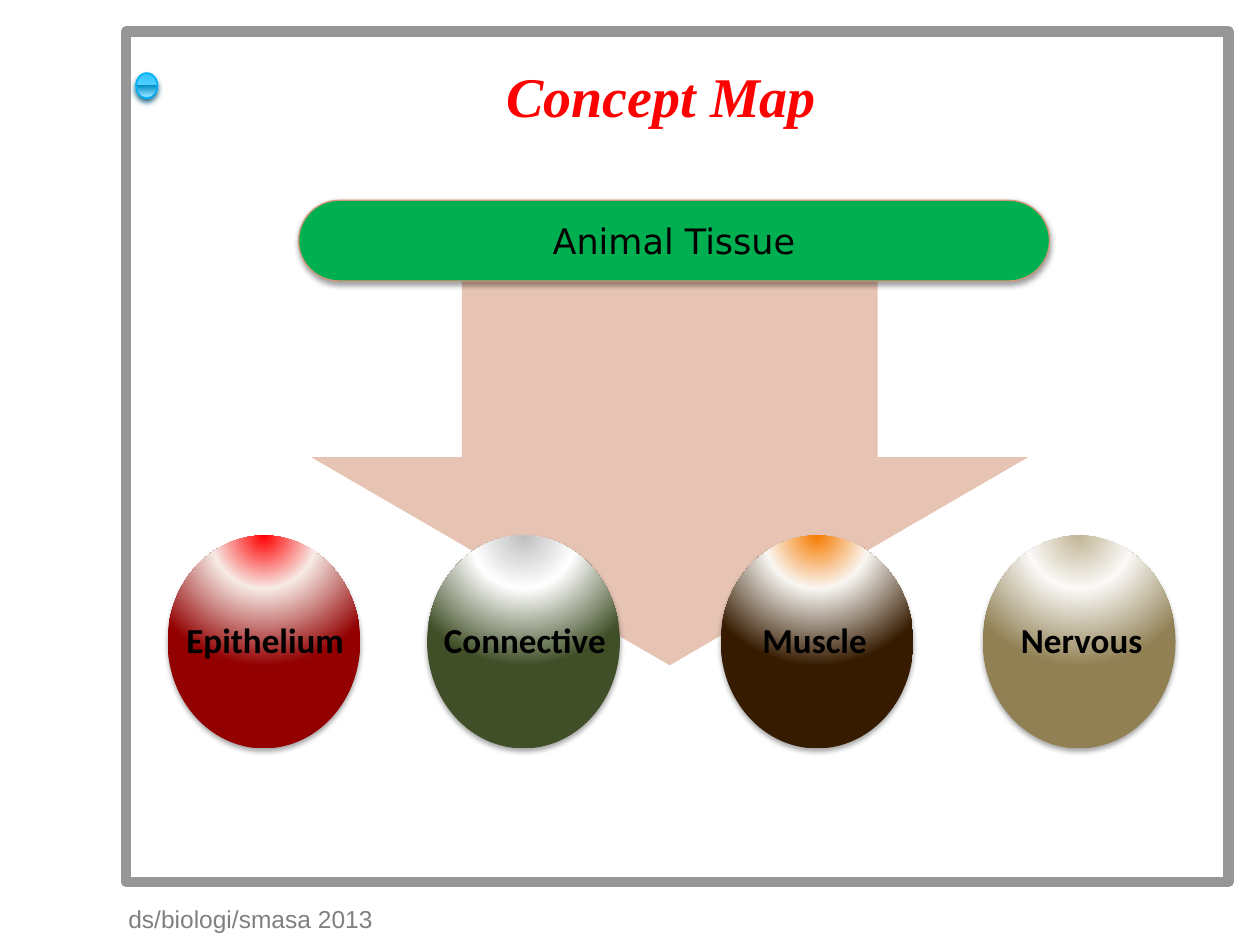
from dataclasses import dataclass
from typing import NamedTuple

from pptx import Presentation
from pptx.dml.color import RGBColor
from pptx.enum.shapes import MSO_SHAPE
from pptx.enum.text import MSO_ANCHOR, PP_ALIGN
from pptx.oxml import parse_xml
from pptx.oxml.ns import nsdecls
from pptx.util import Inches, Pt

RECTANGLE, ELLIPSE = MSO_SHAPE.RECTANGLE, MSO_SHAPE.OVAL
UP_ARROW, ROUNDED = MSO_SHAPE.UP_ARROW, MSO_SHAPE.ROUNDED_RECTANGLE
MIDDLE, TOP = MSO_ANCHOR.MIDDLE, MSO_ANCHOR.TOP
LEFT, CENTER = PP_ALIGN.LEFT, PP_ALIGN.CENTER
RADIAL = '<a:path path="circle"><a:fillToRect l="50000" r="50000" b="100000"/></a:path>'
VERTICAL = '<a:lin ang="5400000" scaled="0"/>'


class Area(NamedTuple):
    left: float
    top: float
    width: float
    height: float


class TextStyle(NamedTuple):
    font: str
    size: int
    color: str
    bold: bool = False
    italic: bool = False


class Shadow(NamedTuple):
    color: str
    opacity: int
    distance: float


class Tissue(NamedTuple):
    name: str
    left: float
    label_left: float
    label_width: float
    colors: tuple[str, str, str]


@dataclass(frozen=True)
class Theme:
    white: str = "FFFFFF"
    frame: str = "969696"
    arrow: str = "E6C3B3"
    banner: str = "00B050"
    banner_line: str = "D3977B"
    dot_line: str = "00B0F6"
    title: TextStyle = TextStyle("Times New Roman", 32, "FF0000", True, True)
    heading: TextStyle = TextStyle("DejaVu Sans", 20, "000000")
    label: TextStyle = TextStyle("Calibri", 20, "000000", True)
    footer: TextStyle = TextStyle("Arial", 14, "808080")
    ball_shadow: Shadow = Shadow("000000", 35, 1.8)
    banner_shadow: Shadow = Shadow("000000", 38, 1.6)
    dot_shadow: Shadow = Shadow("005A7E", 83, 2)
    dot_stops: tuple = ((0, "2FC4FF"), (49, "53CEFF"), (49, "0090C7"), (92, "8FDFFF"), (100, "00B0F6"))
    ball_positions: tuple = (0, 37, 91)


THEME = Theme()
TISSUES = (
    Tissue("Epithelium", 1.33, 1.38, 1.45, ("FF0000", "F7EBE6", "920000")),
    Tissue("Connective", 3.39, 3.42, 1.49, ("BFBFBF", "FFFFFF", "404F27")),
    Tissue("Muscle", 5.72, 5.76, 1.41, ("F77C00", "F9F7F3", "361B00")),
    Tissue("Nervous", 7.8, 7.92, 1.33, ("C2B595", "FBFAF8", "918054")),
)


def add_shape(page, kind, area: Area, fill: str = "", line: str = "", weight: float = 0):
    """Add a preset shape without its default shadow."""
    shape = page.shapes.add_shape(kind, *map(Inches, area))
    shape.shadow.inherit = False
    if fill:
        shape.fill.solid()
        shape.fill.fore_color.rgb = RGBColor.from_string(fill)
    if line:
        shape.line.color.rgb = RGBColor.from_string(line)
        shape.line.width = Pt(weight)
    else:
        shape.line.fill.background()
    return shape


def set_gradient(shape, stops, direction: str) -> None:
    """Fill a shape with gradient stops given as percent and colour."""
    marks = "".join(
        f'<a:gs pos="{position * 1000}"><a:srgbClr val="{color}"/></a:gs>' for position, color in stops
    )
    gradient = parse_xml(
        f'<a:gradFill {nsdecls("a")} rotWithShape="1"><a:gsLst>{marks}</a:gsLst>{direction}</a:gradFill>'
    )
    shape.element.spPr.prstGeom.addnext(gradient)


def set_shadow(shape, shadow: Shadow) -> None:
    """Give a shape a soft shadow that falls downwards."""
    effects = shape.element.spPr.find("{*}effectLst")
    effects.append(parse_xml(
        f'<a:outerShdw {nsdecls("a")} blurRad="{Pt(3.1)}" dist="{Pt(shadow.distance)}" dir="5400000" '
        f'rotWithShape="0"><a:srgbClr val="{shadow.color}"><a:alpha val="{shadow.opacity * 1000}"/>'
        '</a:srgbClr></a:outerShdw>'
    ))


def set_text(shape, text: str, style: TextStyle, align=CENTER, anchor=MIDDLE, wrap: bool = True) -> None:
    """Write one styled paragraph into a shape."""
    frame = shape.text_frame
    frame.text = text
    frame.word_wrap = wrap
    frame.vertical_anchor = anchor
    para = frame.paragraphs[0]
    para.alignment = align
    font = para.runs[0].font
    font.name, font.size = style.font, Pt(style.size)
    font.bold, font.italic = style.bold, style.italic
    font.color.rgb = RGBColor.from_string(style.color)


def add_text(page, area: Area, text: str, style: TextStyle, align=LEFT, anchor=MIDDLE) -> None:
    """Add a text box."""
    box = page.shapes.add_textbox(*map(Inches, area))
    set_text(box, text, style, align, anchor)


def add_tissue(page, tissue: Tissue) -> None:
    """Draw a shaded ball with its label."""
    ball = add_shape(page, ELLIPSE, Area(tissue.left, 4.25, 1.53, 1.69))
    set_gradient(ball, zip(THEME.ball_positions, tissue.colors), RADIAL)
    set_shadow(ball, THEME.ball_shadow)
    area = Area(tissue.label_left, 4.86, tissue.label_width, 0.44)
    add_text(page, area, tissue.name, THEME.label, CENTER, TOP)


def main() -> None:
    """Build the concept map slide."""
    deck = Presentation()
    deck.slide_width, deck.slide_height = Inches(10), Inches(7.5)
    page = deck.slides.add_slide(deck.slide_layouts[6])

    add_shape(page, RECTANGLE, Area(1, 0.25, 8.75, 6.75), THEME.white, THEME.frame, 6)
    add_text(page, Area(3.92, 0.42, 2.92, 0.67), "Concept Map", THEME.title)

    arrow = add_shape(page, UP_ARROW, Area(2.47, 2.22, 5.69, 3.06), THEME.arrow)
    arrow.rotation = 180
    arrow.adjustments[0], arrow.adjustments[1] = 0.58, 0.54

    banner = add_shape(page, ROUNDED, Area(2.37, 1.59, 5.96, 0.64), THEME.banner, THEME.banner_line, 0.75)
    banner.adjustments[0] = 0.5
    set_shadow(banner, THEME.banner_shadow)
    set_text(banner, "Animal Tissue", THEME.heading, wrap=False)

    for tissue in TISSUES:
        add_tissue(page, tissue)

    dot = add_shape(page, ELLIPSE, Area(1.08, 0.58, 0.17, 0.2), line=THEME.dot_line, weight=0.9)
    set_gradient(dot, THEME.dot_stops, VERTICAL)
    set_shadow(dot, THEME.dot_shadow)

    add_text(page, Area(0.92, 7.08, 2.75, 0.42), "ds/biologi/smasa 2013", THEME.footer)
    deck.save("out.pptx")


if __name__ == "__main__":
    main()
